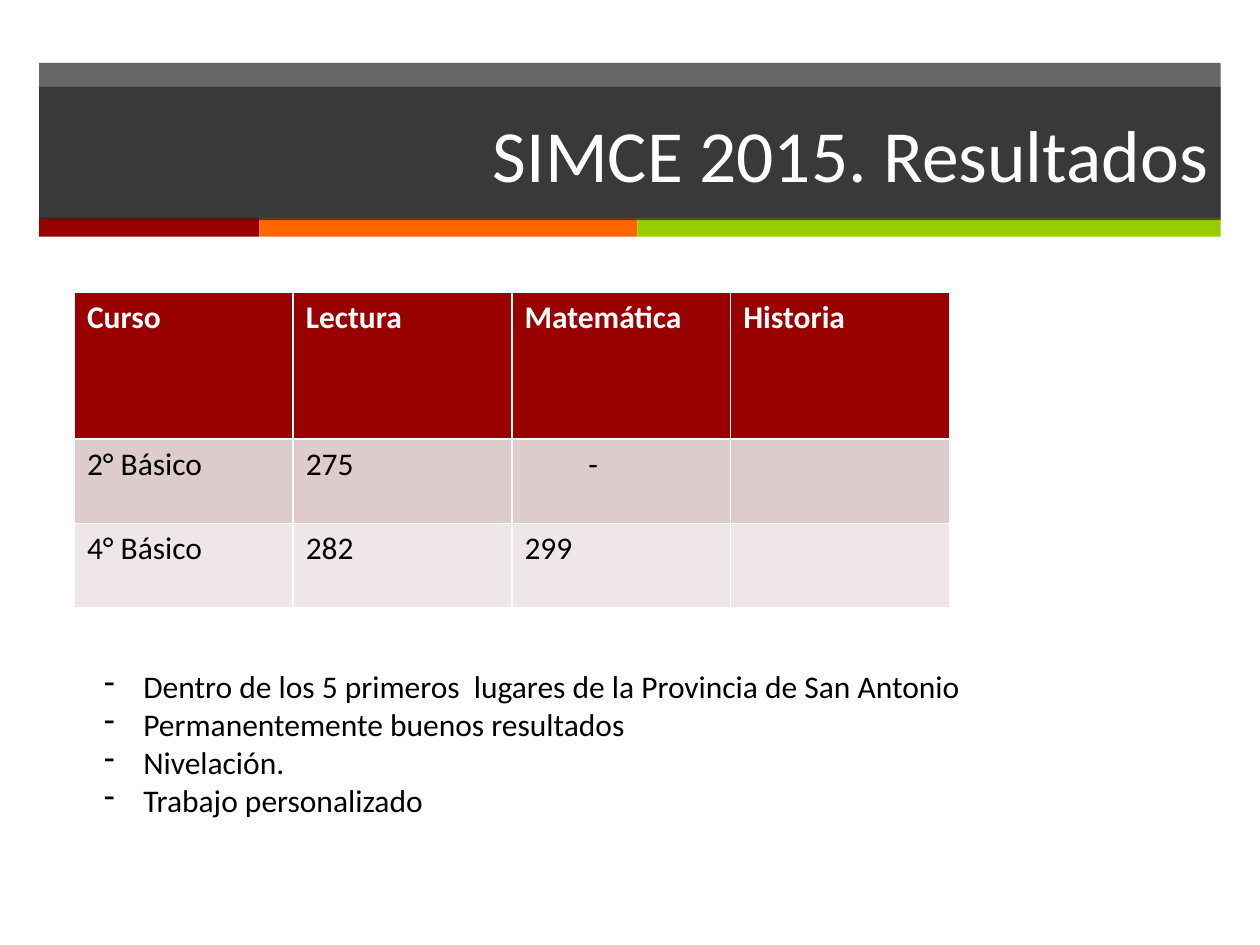
import lxml.etree
import pptx
import pptx.dml.color
import pptx.enum.shapes
import pptx.enum.text
import pptx.oxml.ns
import pptx.util
from pptx.util import Cm

RGBColor = pptx.dml.color.RGBColor
CHARCOAL = RGBColor(0x26, 0x26, 0x26)
RED = RGBColor(0x99, 0x00, 0x00)
ORANGE = RGBColor(0xFF, 0x66, 0x00)
GREEN = RGBColor(0x99, 0xCC, 0x00)
DARK_ROW = RGBColor(0xDE, 0xCC, 0xCC)
LIGHT_ROW = RGBColor(0xEF, 0xE7, 0xE7)
WHITE = RGBColor(0xFF, 0xFF, 0xFF)
BLACK = RGBColor(0x00, 0x00, 0x00)

BAND_LEFT, BAND_WIDTH = 0.79, 23.82
STRIPES = [(4.44, RED), (7.62, ORANGE), (11.76, GREEN)]
RESULTS = [
    ("Curso", "Lectura", "Matemática", "Historia"),
    ("2° Básico", "275", "-", ""),
    ("4° Básico", "282", "299", ""),
]
ROW_STYLES = [(2.95, RED, WHITE), (1.7, DARK_ROW, BLACK), (1.7, LIGHT_ROW, BLACK)]
REMARKS = [
    "Dentro de los 5 primeros  lugares de la Provincia de San Antonio",
    "Permanentemente buenos resultados",
    "Nivelación.",
    "Trabajo personalizado",
]


def style_text(paragraph, size, color, bold=False):
    """Set the font of a whole paragraph."""
    font = paragraph.font
    font.name, font.size, font.bold = "Calibri", pptx.util.Pt(size), bold
    font.color.rgb = color


def add_band(slide, left, top, width, height, color, opacity=100):
    """Add a borderless rectangle with an opacity in percent."""
    band = slide.shapes.add_shape(
        pptx.enum.shapes.MSO_SHAPE.RECTANGLE, Cm(left), Cm(top), Cm(width), Cm(height)
    )
    band.shadow.inherit = False
    band.line.fill.background()
    band.fill.solid()
    band.fill.fore_color.rgb = color
    if opacity < 100:
        srgb = band.fill._xPr.find(".//" + pptx.oxml.ns.qn("a:srgbClr"))
        lxml.etree.SubElement(srgb, pptx.oxml.ns.qn("a:alpha"), val=str(opacity * 1000))
    return band


def add_header(slide, title):
    """Add the layered header with its colour stripes and title."""
    add_band(slide, BAND_LEFT, 1.27, BAND_WIDTH, 3.14, CHARCOAL, 70)
    left = BAND_LEFT
    for width, color in STRIPES:
        add_band(slide, left, 4.39, width, 0.38, color)
        left += width
    title_band = add_band(slide, BAND_LEFT, 1.75, BAND_WIDTH, 2.69, CHARCOAL, 70)
    title_band.text_frame.vertical_anchor = pptx.enum.text.MSO_ANCHOR.MIDDLE
    heading = title_band.text_frame.paragraphs[0]
    heading.text = title
    heading.alignment = pptx.enum.text.PP_ALIGN.RIGHT
    style_text(heading, 42, WHITE)


def add_results(slide):
    """Add the table of scores by course and subject."""
    table = slide.shapes.add_table(
        len(RESULTS), len(RESULTS[0]), Cm(1.5), Cm(5.9), Cm(17.64), Cm(6.35)
    ).table
    for row, scores, (height, fill, color) in zip(table.rows, RESULTS, ROW_STYLES):
        row.height = Cm(height)
        for cell, score in zip(row.cells, scores):
            cell.fill.solid()
            cell.fill.fore_color.rgb = fill
            cell.text = score
            style_text(cell.text_frame.paragraphs[0], 18, color, bold=fill == RED)
            if score == "-":
                cell.margin_left = Cm(1.54)


def add_remarks(slide):
    """Add the dashed list of remarks."""
    frame = slide.shapes.add_textbox(Cm(1.85), Cm(13.33), Cm(18.95), Cm(3.33)).text_frame
    frame.word_wrap = True
    for index, remark in enumerate(REMARKS):
        paragraph = frame.add_paragraph() if index else frame.paragraphs[0]
        paragraph.text = remark
        properties = paragraph._p.get_or_add_pPr()
        properties.set("marL", str(Cm(0.79)))
        properties.set("indent", str(-Cm(0.79)))
        lxml.etree.SubElement(properties, pptx.oxml.ns.qn("a:buChar"), char="-")
        style_text(paragraph, 18, BLACK)


def main():
    """Build and save the slide of test results."""
    presentation = pptx.Presentation()
    presentation.slide_width, presentation.slide_height = Cm(25.4), Cm(19.05)
    slide = presentation.slides.add_slide(presentation.slide_layouts[6])
    add_header(slide, "SIMCE 2015. Resultados")
    add_results(slide)
    add_remarks(slide)
    presentation.save("out.pptx")


if __name__ == "__main__":
    main()
